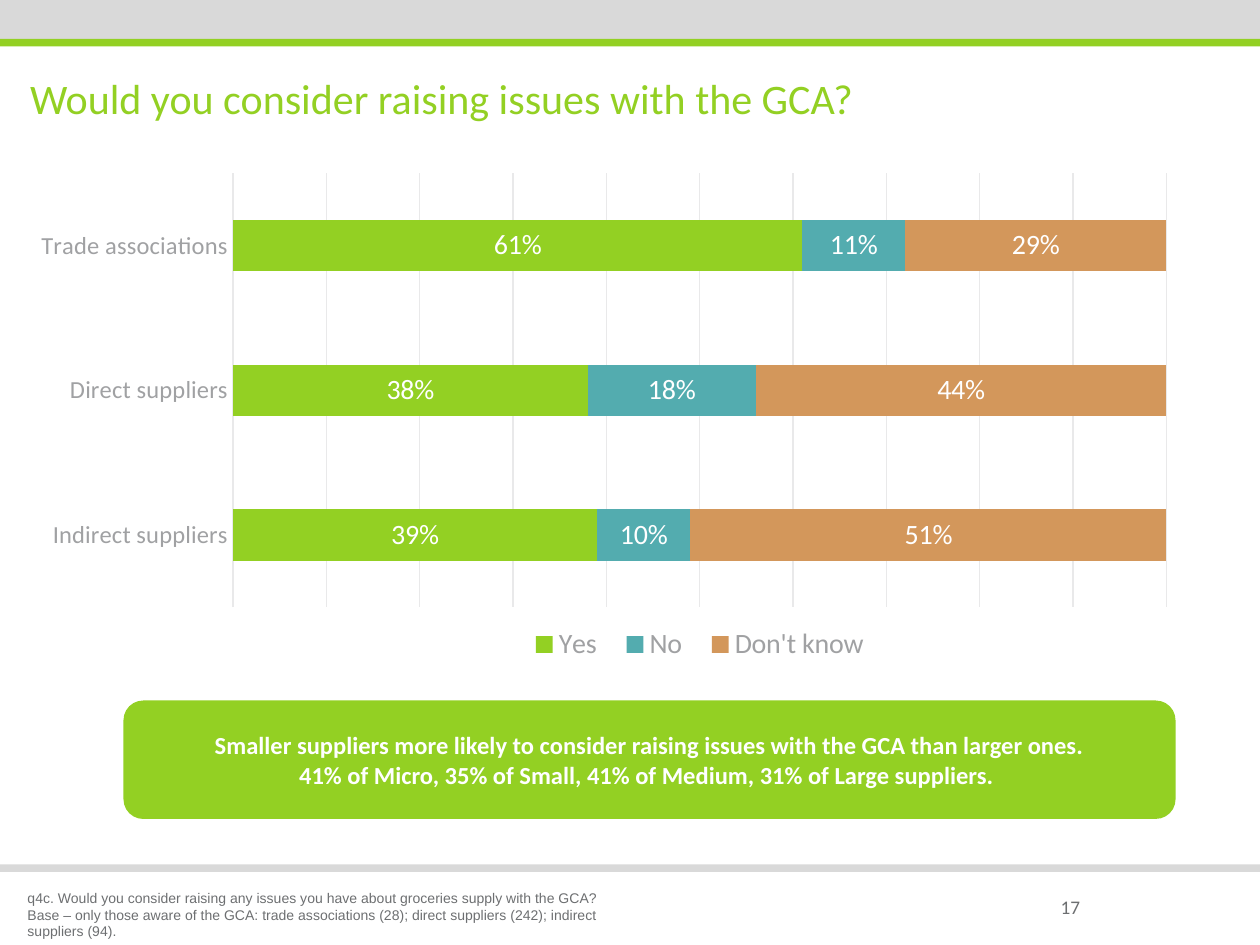
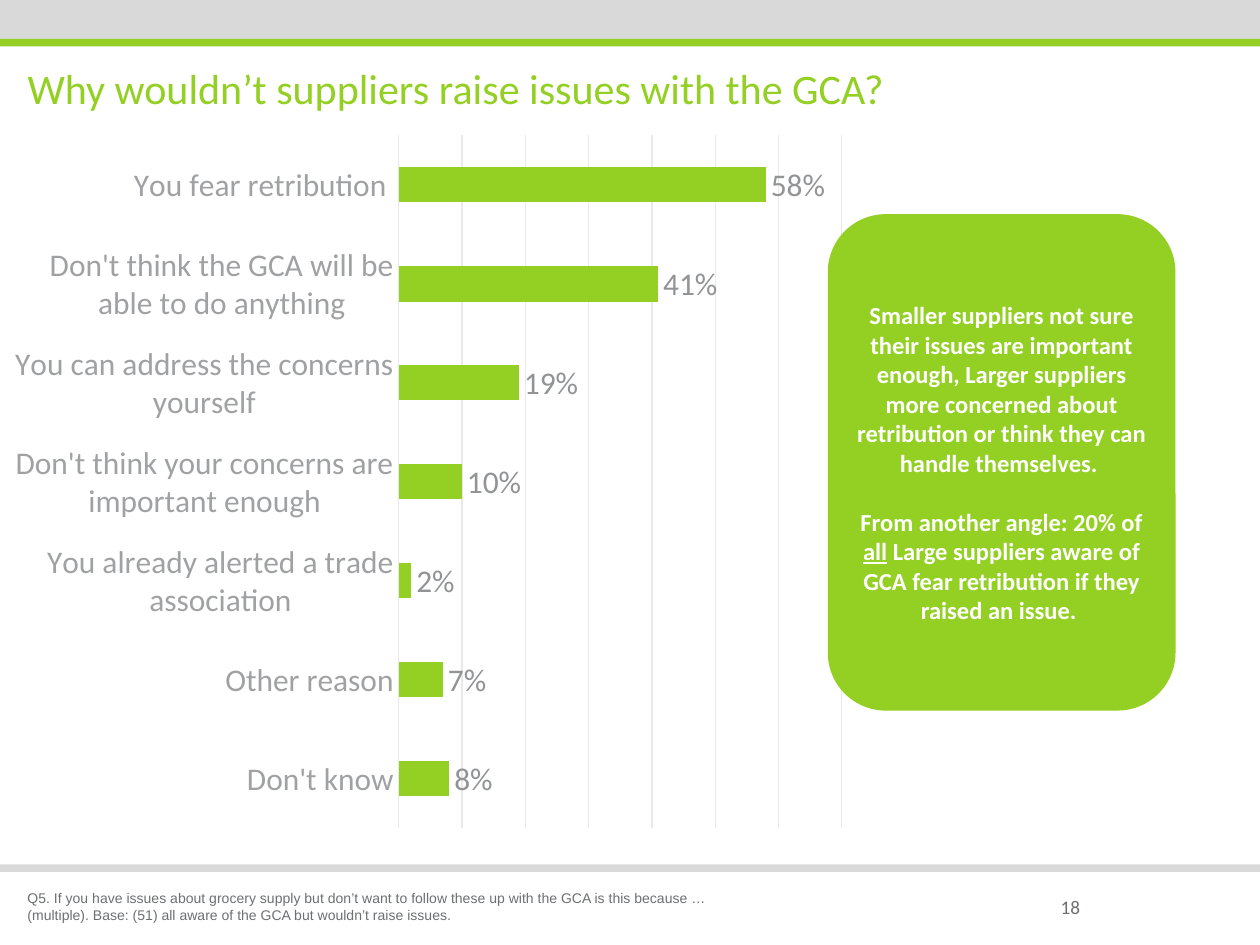
import pptx
import pptx.chart.data
import pptx.dml.color
import pptx.enum.chart
import pptx.enum.shapes
import pptx.enum.text
import pptx.oxml
import pptx.oxml.ns
import pptx.util

RGBColor = pptx.dml.color.RGBColor
Pt, Inches = pptx.util.Pt, pptx.util.Inches
Shape = pptx.enum.shapes.MSO_SHAPE
Align, Anchor = pptx.enum.text.PP_ALIGN, pptx.enum.text.MSO_ANCHOR
Kind = pptx.enum.chart.XL_CHART_TYPE
Spot = pptx.enum.chart.XL_LABEL_POSITION
Tick = pptx.enum.chart.XL_TICK_MARK
Side = pptx.enum.chart.XL_LEGEND_POSITION

GREEN = RGBColor(0x93, 0xD0, 0x23)
TEAL = RGBColor(0x53, 0xAC, 0xAF)
ORANGE = RGBColor(0xD3, 0x97, 0x5B)
BAND = RGBColor(0xD9, 0xD9, 0xD9)
GRID = RGBColor(0xE9, 0xE9, 0xEA)
LABEL = RGBColor(0xA0, 0xA1, 0xA3)
VALUE = RGBColor(0x91, 0x93, 0x95)
INK = RGBColor(0x6D, 0x6F, 0x71)
WHITE = RGBColor(0xFF, 0xFF, 0xFF)

WIDE, HIGH = 10, 7.5
BANDS = [(0, 0.31, BAND), (0.31, 0.06, GREEN), (6.86, 0.06, BAND)]

# Boxes are left, top, width, height in inches; plot and key are shares of the chart.
# A callout is a list of paragraphs, each a list of (text, underlined) runs.
SLIDES = [
    dict(
        title="Would you consider raising issues with the GCA?",
        head=(0.14, 0.52, 9.69, 0.51),
        page=17,
        note="q4c. Would you consider raising any issues you have about groceries "
             "supply with the GCA? Base – only those aware of the GCA: trade "
             "associations (28); direct suppliers (242); indirect suppliers (94).",
        foot=(0.12, 7.01, 5, 0.5),
        chart=dict(
            kind=Kind.BAR_STACKED, box=(0.12, 1.23, 9.45, 4.09),
            plot=(0.183, 0.036, 0.784, 0.842), key=(0.42, 0.9, 0.31, 0.1),
            top=1, size=14, mark=(16, WHITE, Spot.CENTER),
            cats=["Trade associations", "Direct suppliers", "Indirect suppliers"],
            rows=[("Yes", GREEN, (0.61, 0.38, 0.39)),
                  ("No", TEAL, (0.11, 0.18, 0.1)),
                  ("Don't know", ORANGE, (0.29, 0.44, 0.51))]),
        box=(0.98, 5.56, 8.35, 0.94), gap=0,
        call=[[("Smaller suppliers more likely to consider raising issues with "
                "the GCA than larger ones.", False)],
              [("41% of Micro, 35% of Small, 41% of Medium, 31% of Large "
                "suppliers. ", False)]]),
    dict(
        title="Why wouldn’t suppliers raise issues with the GCA?",
        head=(0.12, 0.44, 9.69, 0.51),
        page=18,
        note="Q5. If you have issues about grocery supply but don’t want to follow "
             "these up with the GCA is this because … (multiple). Base: (51) all "
             "aware of the GCA but wouldn’t raise issues.",
        foot=(0.12, 7.01, 6.06, 0.37),
        chart=dict(
            kind=Kind.BAR_CLUSTERED, box=(0.12, 1.07, 7.01, 5.51),
            plot=(0.433, 0, 0.503, 1), key=None,
            top=0.7, size=18, mark=(18, VALUE, Spot.OUTSIDE_END),
            cats=["You fear retribution ",
                  "Don't think the GCA will be able to do anything",
                  "You can address the concerns yourself",
                  "Don't think your concerns are important enough",
                  "You already alerted a trade association",
                  "Other reason", "Don't know"],
            rows=[("Series 1", GREEN, (0.58, 0.41, 0.19, 0.1, 0.02, 0.07, 0.08))]),
        box=(6.57, 1.7, 2.76, 3.94), gap=17,
        call=[[("Smaller suppliers not sure their issues are important enough, "
                "Larger suppliers more concerned about retribution or think they "
                "can handle themselves. ", False)],
              [("From another angle: 20% of ", False), ("all", True),
               (" Large suppliers aware of GCA fear retribution if they raised "
                "an issue. ", False)]]),
]


def inch(box):
    return [Inches(n) for n in box]


def style(font, size, color, name="Calibri"):
    font.size, font.name = Pt(size), name
    font.color.rgb = color


def write(slide, box, text, size, color, anchor=Anchor.MIDDLE, name="Calibri"):
    frame = slide.shapes.add_textbox(*inch(box)).text_frame
    frame.word_wrap = True
    frame.vertical_anchor = anchor
    frame.text = text
    style(frame.paragraphs[0].font, size, color, name)


def block(slide, kind, box, color):
    shape = slide.shapes.add_shape(kind, *inch(box))
    shape.shadow.inherit = False
    shape.fill.solid()
    shape.fill.fore_color.rgb = color
    shape.line.fill.background()
    return shape


def place(node, index, shares, inner=False):
    """Give a plot area or legend a fixed place inside its chart."""
    for old in node.findall(pptx.oxml.ns.qn("c:layout")):
        node.remove(old)
    target = '<c:layoutTarget val="inner"/>' if inner else ""
    modes = '<c:xMode val="edge"/><c:yMode val="edge"/>'
    sizes = "".join(f'<c:{tag} val="{n}"/>' for tag, n in zip("xywh", shares))
    node.insert(index, pptx.oxml.parse_xml(
        f'<c:layout {pptx.oxml.ns.nsdecls("c")}><c:manualLayout>'
        f'{target}{modes}{sizes}</c:manualLayout></c:layout>'))


def rule(line):
    line.color.rgb = GRID
    line.width = Pt(0.75)


def graph(slide, kind, box, plot, key, top, size, mark, cats, rows):
    data = pptx.chart.data.CategoryChartData(number_format="0%")
    data.categories = cats
    for name, _, values in rows:
        data.add_series(name, values)
    chart = slide.shapes.add_chart(kind, *inch(box), data).chart
    style(chart.font, 10, INK)
    chart.has_title = False

    axis = chart.category_axis
    axis.reverse_order = True
    axis.major_tick_mark = axis.minor_tick_mark = Tick.NONE
    style(axis.tick_labels.font, size, LABEL)
    rule(axis.format.line)
    scale = chart.value_axis
    scale.minimum_scale, scale.maximum_scale, scale.major_unit = 0, top, 0.1
    scale.has_major_gridlines = True
    rule(scale.major_gridlines.format.line)
    scale.visible = False

    bars = chart.plots[0]
    bars.gap_width = 182
    bars.overlap = 100 if kind == Kind.BAR_STACKED else 0
    bars.vary_by_categories = False
    points, color, spot = mark
    for series, (_, fill, _) in zip(bars.series, rows):
        series.format.fill.solid()
        series.format.fill.fore_color.rgb = fill
        labels = series.data_labels
        labels.show_value = True
        labels.number_format, labels.number_format_is_linked = "0%", False
        labels.position = spot
        style(labels.font, points, color)

    area = chart._chartSpace.find(".//" + pptx.oxml.ns.qn("c:plotArea"))
    place(area, 0, plot, inner=True)
    chart.has_legend = key is not None
    if key:
        chart.legend.position = Side.BOTTOM
        chart.legend.include_in_layout = False
        style(chart.legend.font, 16, LABEL)
        place(chart.legend._element, 1, key)


def callout(slide, box, paras, gap):
    frame = block(slide, Shape.ROUNDED_RECTANGLE, box, GREEN).text_frame
    frame.word_wrap = True
    frame.vertical_anchor = Anchor.MIDDLE
    for i, runs in enumerate(paras):
        para = frame.add_paragraph() if i else frame.paragraphs[0]
        para.alignment = Align.CENTER
        if i and gap:
            para.space_before = Pt(gap)
        style(para.font, 14, WHITE)
        para.font.bold = True
        for text, under in runs:
            run = para.add_run()
            run.text = text
            if under:
                run.font.underline = True


def main():
    deck = pptx.Presentation()
    deck.slide_width, deck.slide_height = Inches(WIDE), Inches(HIGH)
    for item in SLIDES:
        slide = deck.slides.add_slide(deck.slide_layouts[6])
        for top, high, color in BANDS:
            block(slide, Shape.RECTANGLE, (0, top, WIDE, high), color)
        write(slide, item["head"], item["title"], 24, GREEN)
        write(slide, (8.32, 6.94, 0.77, 0.52), str(item["page"]), 11, INK)
        write(slide, item["foot"], item["note"], 8, INK, Anchor.TOP, "Arial")
        graph(slide, **item["chart"])
        callout(slide, item["box"], item["call"], item["gap"])
    deck.save("out.pptx")


if __name__ == "__main__":
    main()
